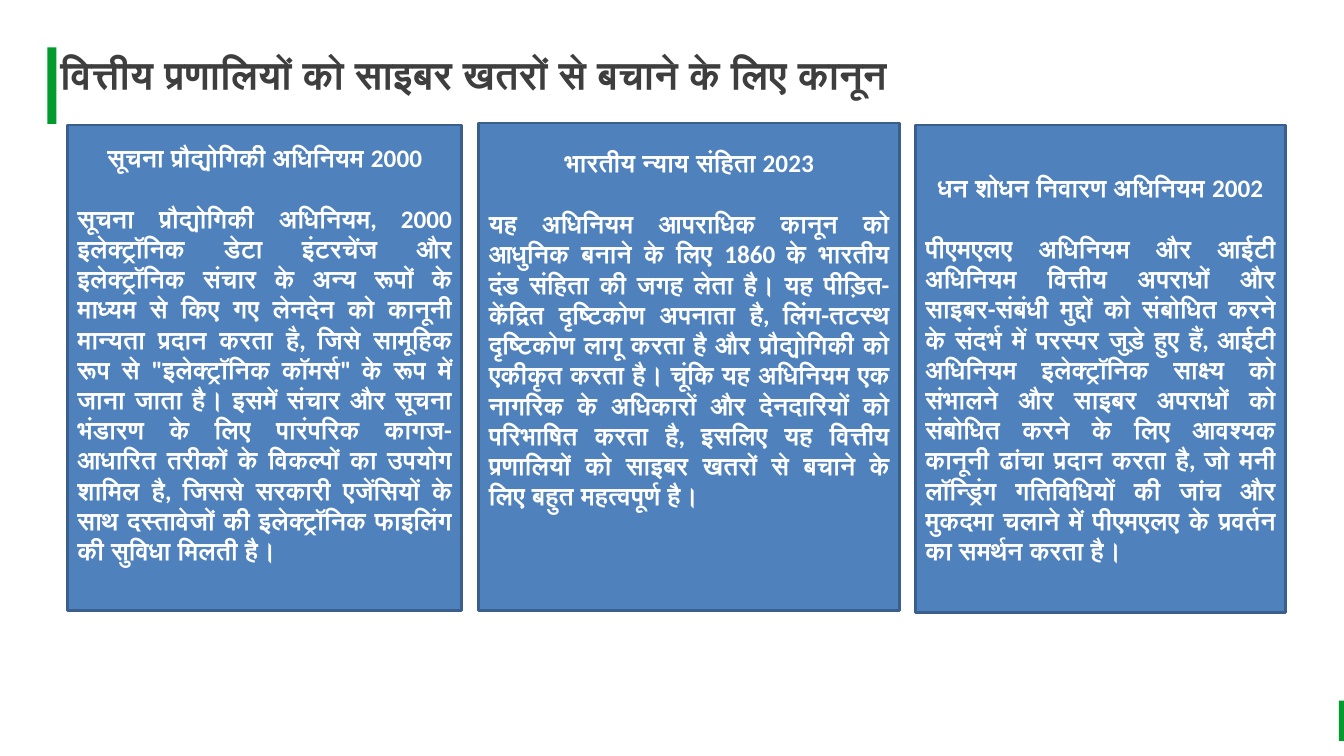
"""Builds a slide on three laws that protect financial systems from cyber threats."""
from pptx import Presentation
from pptx.dml.color import RGBColor
from pptx.enum.shapes import MSO_SHAPE
from pptx.enum.text import MSO_ANCHOR, PP_ALIGN
from pptx.util import Inches, Pt

RECTANGLE = MSO_SHAPE.RECTANGLE
MIDDLE = MSO_ANCHOR.MIDDLE
LEFT, CENTER, JUSTIFY = PP_ALIGN.LEFT, PP_ALIGN.CENTER, PP_ALIGN.JUSTIFY

GREEN = RGBColor(0x02, 0x9B, 0x2D)
CHARCOAL = RGBColor(0x3E, 0x3E, 0x3E)
BLUE = RGBColor(0x4F, 0x81, 0xBD)
NAVY = RGBColor(0x3A, 0x5F, 0x8C)
WHITE = RGBColor(0xFF, 0xFF, 0xFF)

TITLE = "वित्तीय प्रणालियों को साइबर खतरों से बचाने के लिए कानून"
LAWS = [
    ((0.67, 1.24, 3.91, 4.82), 0.33, "सूचना प्रौद्योगिकी अधिनियम 2000",
     "सूचना प्रौद्योगिकी अधिनियम, 2000 इलेक्ट्रॉनिक डेटा इंटरचेंज और इलेक्ट्रॉनिक संचार के "
     "अन्य रूपों के माध्यम से किए गए लेनदेन को कानूनी मान्यता प्रदान करता है, जिसे सामूहिक "
     "रूप से \"इलेक्ट्रॉनिक कॉमर्स\" के रूप में जाना जाता है। इसमें संचार और सूचना भंडारण के "
     "लिए पारंपरिक कागज-आधारित तरीकों के विकल्पों का उपयोग शामिल है, जिससे सरकारी "
     "एजेंसियों के साथ दस्तावेजों की इलेक्ट्रॉनिक फाइलिंग की सुविधा मिलती है।"),
    ((4.75, 1.22, 4.17, 4.84), 0.8, "भारतीय न्याय संहिता 2023",
     "यह अधिनियम आपराधिक कानून को आधुनिक बनाने के लिए 1860 के भारतीय दंड संहिता की "
     "जगह लेता है। यह पीड़ित-केंद्रित दृष्टिकोण अपनाता है, लिंग-तटस्थ दृष्टिकोण लागू करता है "
     "और प्रौद्योगिकी को एकीकृत करता है। चूंकि यह अधिनियम एक नागरिक के अधिकारों और "
     "देनदारियों को परिभाषित करता है, इसलिए यह वित्तीय प्रणालियों को साइबर खतरों से बचाने "
     "के लिए बहुत महत्वपूर्ण है।"),
    ((9.08, 1.24, 3.67, 4.84), 0.05, "धन शोधन निवारण अधिनियम 2002",
     "पीएमएलए अधिनियम और आईटी अधिनियम वित्तीय अपराधों और साइबर-संबंधी मुद्दों को "
     "संबोधित करने के संदर्भ में परस्पर जुड़े हुए हैं, आईटी अधिनियम इलेक्ट्रॉनिक साक्ष्य को "
     "संभालने और साइबर अपराधों को संबोधित करने के लिए आवश्यक कानूनी ढांचा प्रदान करता है, "
     "जो मनी लॉन्ड्रिंग गतिविधियों की जांच और मुकदमा चलाने में पीएमएलए के प्रवर्तन का "
     "समर्थन करता है।"),
]


def write(para, text, font="Calibri", size=18, color=WHITE, align=LEFT, after=0):
    """Put bold text into a paragraph."""
    para.alignment = align
    para.space_after = Pt(after)
    span = para.add_run()
    span.text = text
    span.font.name = font
    span.font.size = Pt(size)
    span.font.bold = True
    span.font.color.rgb = color


class LawPage:
    """Holds the current slide and draws its elements in one style."""

    def __init__(self, page):
        self.shapes = page.shapes

    def rectangle(self, place, fill, line=None):
        """Draw a flat rectangle."""
        box = self.shapes.add_shape(RECTANGLE, *map(Inches, place))
        box.shadow.inherit = False
        box.fill.solid()
        box.fill.fore_color.rgb = fill
        if line is None:
            box.line.fill.background()
        else:
            box.line.color.rgb = line
            box.line.width = Pt(2)
        return box

    def title(self, place, text):
        """Write the slide title in a box without insets."""
        frame = self.shapes.add_textbox(*map(Inches, place)).text_frame
        frame.word_wrap = True
        frame.margin_left = frame.margin_right = 0
        frame.margin_top = frame.margin_bottom = 0
        write(frame.paragraphs[0], text, font="Times New Roman", size=28, color=CHARCOAL)

    def law(self, place, bottom, heading, body):
        """Draw a panel with the name of a law and its description."""
        frame = self.rectangle(place, BLUE, NAVY).text_frame
        frame.word_wrap = True
        frame.vertical_anchor = MIDDLE
        frame.margin_bottom = Inches(bottom)
        write(frame.paragraphs[0], heading, align=CENTER, after=22)
        write(frame.add_paragraph(), body, align=JUSTIFY)


def main():
    """Build and save the deck."""
    deck = Presentation()
    deck.slide_width, deck.slide_height = Inches(13.33), Inches(7.5)
    page = LawPage(deck.slides.add_slide(deck.slide_layouts[6]))
    page.rectangle((13.28, 6.95, 0.05, 0.4), GREEN)
    page.rectangle((0.47, 0.47, 0.09, 0.76), GREEN)
    page.title((0.6, 0.5, 11.98, 0.47), TITLE)
    for law in LAWS:
        page.law(*law)
    deck.save("out.pptx")


if __name__ == "__main__":
    main()
